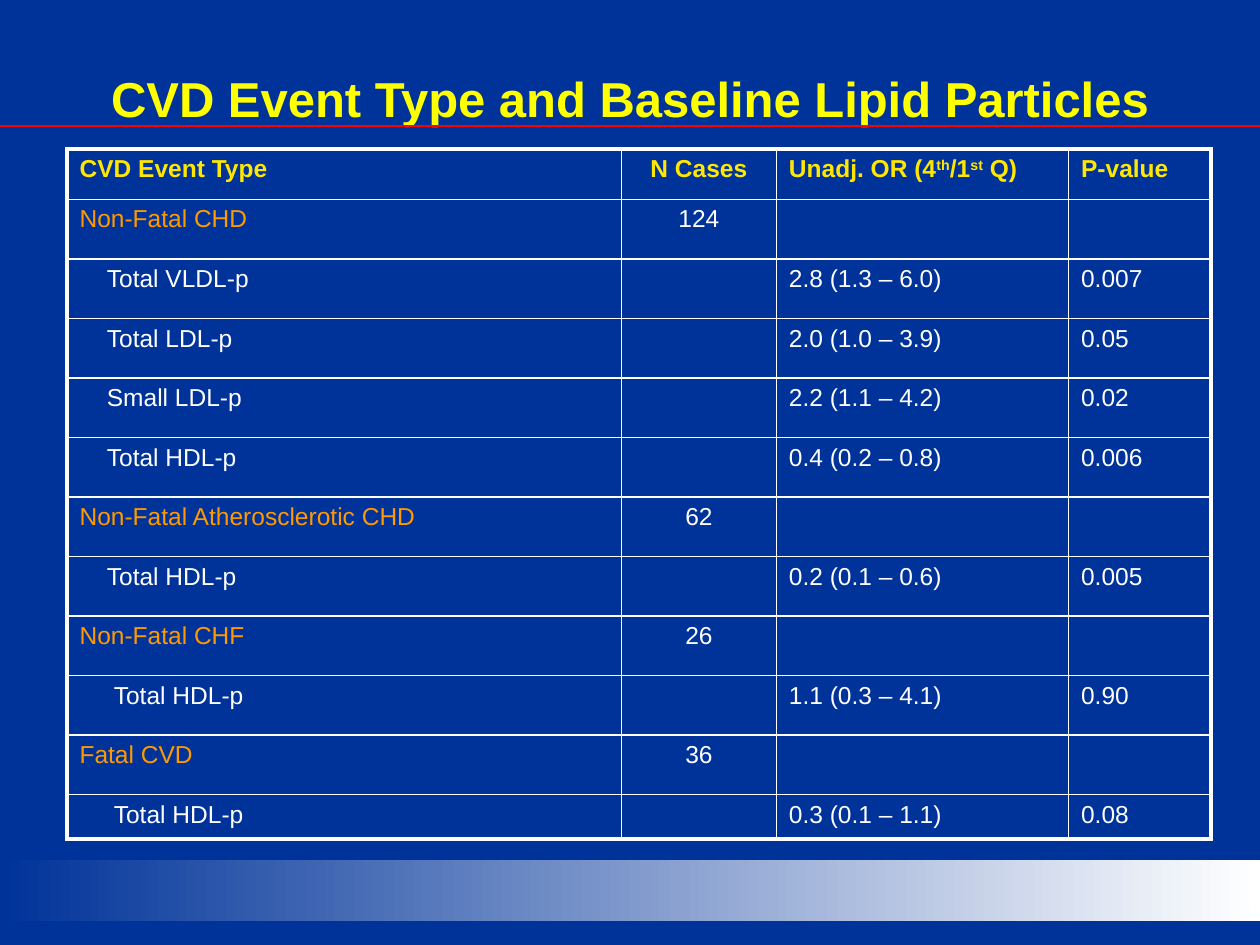
from lxml.etree import SubElement
from pptx import Presentation
from pptx.dml.color import RGBColor
from pptx.enum.shapes import MSO_CONNECTOR, MSO_SHAPE
from pptx.enum.text import MSO_ANCHOR, MSO_AUTO_SIZE, PP_ALIGN
from pptx.oxml import parse_xml
from pptx.oxml.ns import nsdecls, qn
from pptx.util import Cm, Pt

COLORS = {
    "background": "003399",
    "white": "FFFFFF",
    "title": "FFFF00",
    "header": "FFE701",
    "event": "FF9900",
    "rule": "FF0000",
}
FORMATS = {
    "title": {"name": "Arial", "size": Pt(28), "bold": True},
    "header": {"name": "Arial", "size": Pt(14), "bold": True},
    "event": {"name": "Arial", "size": Pt(14), "bold": False},
    "white": {"name": "Arial", "size": Pt(14), "bold": False},
}
COLUMN_WIDTHS = [11.18, 3.12, 5.89, 2.87]
HEADER_HEIGHT, BODY_HEIGHT, LAST_HEIGHT = 1.02, 1.2, 0.89
CASES_COLUMN = 1
OUTER_WIDTH, INNER_WIDTH = Pt(2.25), Pt(1)

HEADERS = [
    [("CVD Event Type", 0)],
    [("N Cases", 0)],
    [("Unadj. OR (4", 0), ("th", 30000), ("/1", 0), ("st", 30000), (" Q)", 0)],
    [("P-value", 0)],
]
EVENTS = [
    ("Non-Fatal CHD", "124", 0.55, [
        ("Total VLDL-p", "2.8 (1.3 – 6.0)", "0.007"),
        ("Total LDL-p", "2.0 (1.0 – 3.9)", "0.05"),
        ("Small LDL-p", "2.2 (1.1 – 4.2)", "0.02"),
        ("Total HDL-p", "0.4 (0.2 – 0.8)", "0.006"),
    ]),
    ("Non-Fatal Atherosclerotic CHD", "62", 0.55, [
        ("Total HDL-p", "0.2 (0.1 – 0.6)", "0.005"),
    ]),
    ("Non-Fatal CHF", "26", 0.69, [("Total HDL-p", "1.1 (0.3 – 4.1)", "0.90")]),
    ("Fatal CVD", "36", 0.69, [("Total HDL-p", "0.3 (0.1 – 1.1)", "0.08")]),
]


def color(name):
    """Return the named colour."""
    return RGBColor.from_string(COLORS[name])


def add_run(paragraph, text, style, baseline=0):
    """Add a run in the given style, raised when a baseline is set."""
    run = paragraph.add_run()
    run.text = text
    for attribute, value in FORMATS[style].items():
        setattr(run.font, attribute, value)
    run.font.color.rgb = color(style)
    if baseline:
        run.font._element.set("baseline", str(baseline))


def add_gradient_band(slide):
    """Add the band that fades to white near the slide bottom."""
    shape = slide.shapes.add_shape(
        MSO_SHAPE.RECTANGLE, 0, Cm(17.34), Cm(25.4), Cm(1.23))
    shape.shadow.inherit = False
    shape.line.fill.background()
    shape.fill.gradient()
    shape.fill.gradient_angle = 0
    ends = (("background", 0), ("white", 1))
    for stop, (name, position) in zip(shape.fill.gradient_stops, ends):
        stop.color.rgb = color(name)
        stop.position = position


def set_title(slide, text):
    """Place and format the title placeholder."""
    title = slide.shapes.title
    title.left, title.top = Cm(1.27), Cm(0.76)
    title.width, title.height = Cm(22.86), Cm(2.41)
    frame = title.text_frame
    frame.word_wrap = True
    frame.auto_size = MSO_AUTO_SIZE.NONE
    frame.vertical_anchor = MSO_ANCHOR.MIDDLE
    paragraph = frame.paragraphs[0]
    paragraph.alignment = PP_ALIGN.CENTER
    add_run(paragraph, text, "title")


def set_borders(cell, widths):
    """Draw white cell borders with the given width for each side."""
    properties = cell._tc.get_or_add_tcPr()
    for index, (side, width) in enumerate(widths.items()):
        properties.insert(index, parse_xml(
            f'<a:ln{side} {nsdecls("a")} w="{width}"><a:solidFill>'
            f'<a:srgbClr val="{COLORS["white"]}"/></a:solidFill></a:ln{side}>'))


def fill_cell(cell, runs, style, centered=False, indent=0):
    """Write formatted runs into an unfilled cell."""
    cell.fill.background()
    paragraph = cell.text_frame.paragraphs[0]
    paragraph.alignment = PP_ALIGN.CENTER if centered else PP_ALIGN.LEFT
    if indent:
        paragraph._p.get_or_add_pPr().set("marL", str(Cm(indent)))
    for text, baseline in runs:
        add_run(paragraph, text, style, baseline)
    if not runs:
        SubElement(paragraph._p, qn("a:endParaRPr"), sz="1400")


def table_rows():
    """Return each row as its cells of runs, first-column style and indent."""
    rows = [(HEADERS, "header", 0)]
    for event, cases, indent, particles in EVENTS:
        rows.append(([[(event, 0)], [(cases, 0)], [], []], "event", 0))
        for name, ratio, p_value in particles:
            cells = [[(name, 0)], [], [(ratio, 0)], [(p_value, 0)]]
            rows.append((cells, "white", indent))
    return rows


def add_event_table(slide):
    """Add the table of event types and lipid particles."""
    rows = table_rows()
    last_row, last_column = len(rows) - 1, len(COLUMN_WIDTHS) - 1
    heights = [HEADER_HEIGHT] + [BODY_HEIGHT] * (last_row - 1) + [LAST_HEIGHT]
    table = slide.shapes.add_table(
        len(rows), len(COLUMN_WIDTHS), Cm(1.35), Cm(3),
        Cm(sum(COLUMN_WIDTHS)), Cm(sum(heights))).table
    table.first_row = table.horz_banding = False
    for column, width in zip(table.columns, COLUMN_WIDTHS):
        column.width = Cm(width)
    for row_index, (cells, style, indent) in enumerate(rows):
        table.rows[row_index].height = Cm(heights[row_index])
        for column_index, runs in enumerate(cells):
            first = column_index == 0
            cell = table.cell(row_index, column_index)
            fill_cell(cell, runs,
                      style if first or row_index == 0 else "white",
                      column_index == CASES_COLUMN, indent if first else 0)
            outer_sides = {
                "L": first,
                "R": column_index == last_column,
                "T": row_index == 0,
                "B": row_index == last_row,
            }
            set_borders(cell, {
                side: OUTER_WIDTH if outer else INNER_WIDTH
                for side, outer in outer_sides.items()})


def add_rule(slide):
    """Add the thin rule across the slide under the title."""
    rule = slide.shapes.add_connector(
        MSO_CONNECTOR.STRAIGHT, 0, Cm(2.54), Cm(25.4), Cm(2.54))
    rule.line.color.rgb = color("rule")
    rule.line.width = Pt(0.75)
    SubElement(rule._element.spPr, qn("a:effectLst"))


def main():
    """Build and save the presentation."""
    presentation = Presentation()
    presentation.slide_width, presentation.slide_height = Cm(25.4), Cm(19.05)
    slide = presentation.slides.add_slide(presentation.slide_layouts[5])
    slide.background.fill.solid()
    slide.background.fill.fore_color.rgb = color("background")
    add_gradient_band(slide)
    set_title(slide, "CVD Event Type and Baseline Lipid Particles")
    add_event_table(slide)
    add_rule(slide)
    presentation.save("out.pptx")


if __name__ == "__main__":
    main()
